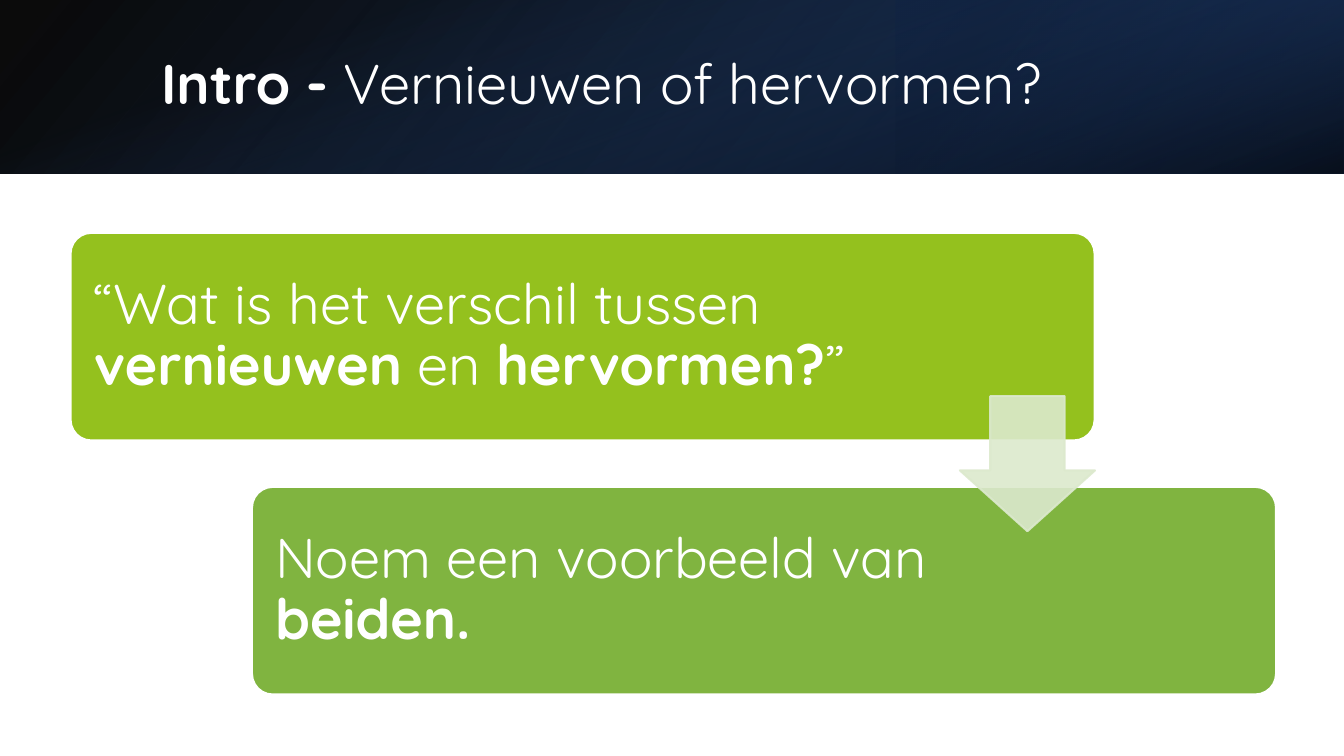
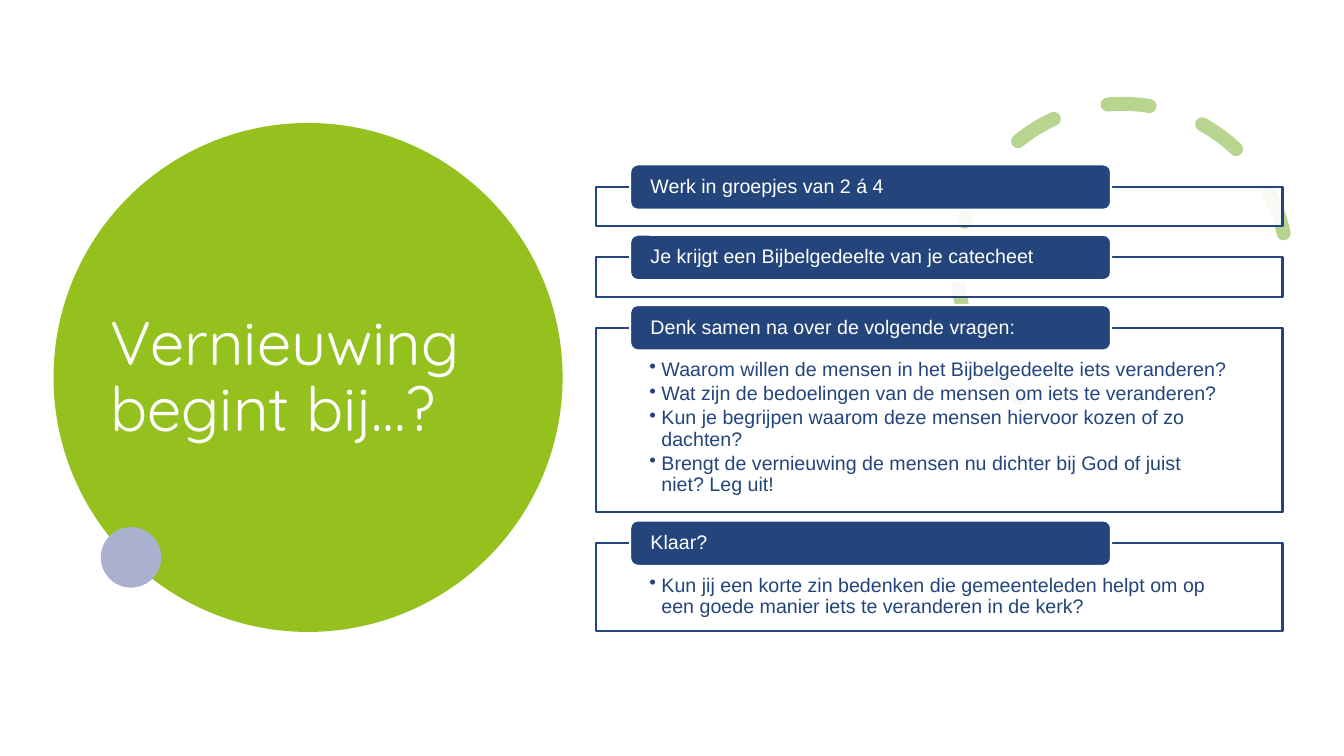
from dataclasses import dataclass

from lxml.etree import SubElement
from pptx import Presentation
from pptx.dml.color import RGBColor
from pptx.enum.dml import MSO_LINE
from pptx.enum.shapes import MSO_SHAPE as SHAPE
from pptx.enum.text import MSO_ANCHOR as ANCHOR, PP_ALIGN as ALIGN
from pptx.oxml.ns import qn
from pptx.util import Inches, Pt


@dataclass(frozen=True)
class Theme:
    white: str = "FFFFFF"
    black: str = "000000"
    navy: str = "23457C"
    deep_navy: str = "1A345D"
    night: str = "11223E"
    lime: str = "94C11E"
    green: str = "80B440"
    pale_green: str = "DCE9CD"
    dash_green: str = "B7D58F"
    lavender: str = "A9B1CF"
    display: str = "Quicksand"
    body: str = "Arial"
    statement_size: int = 40
    title_size: int = 44
    body_size: int = 14
    outline: float = 1.5


T = Theme()
WIDTH, HEIGHT = Inches(13.33), Inches(7.5)
BAND_HEIGHT = 22.93


# Grid: 100 columns by 100 rows over the slide
def cells(x, y, w, h):
    return (int(WIDTH * x / 100), int(HEIGHT * y / 100),
            int(WIDTH * w / 100), int(HEIGHT * h / 100))


def rgb(color):
    return RGBColor.from_string(color)


def set_alpha(color_element, percent):
    SubElement(color_element, qn("a:alpha")).set("val", str(percent * 1000))


# Shapes
def add_block(slide, kind, box, fill=None, line=None, width=T.outline):
    block = slide.shapes.add_shape(kind, *cells(*box))
    block.shadow.inherit = False
    if fill:
        block.fill.solid()
        block.fill.fore_color.rgb = rgb(fill)
    else:
        block.fill.background()
    if line:
        block.line.color.rgb = rgb(line)
        block.line.width = Pt(width)
    else:
        block.line.fill.background()
    return block


def add_gradient(slide, box, angle, stops):
    """Stops are (position, colour, opacity); the angle runs clockwise."""
    layer = add_block(slide, SHAPE.RECTANGLE, box)
    layer.fill.gradient()
    layer.fill.gradient_angle = 360 - angle
    for stop, (position, color, _) in zip(layer.fill.gradient_stops, stops):
        stop.position = position
        stop.color.rgb = rgb(color)
    colors = layer.element.spPr.iter(qn("a:srgbClr"))
    for color_element, (_, _, opacity) in zip(colors, stops):
        set_alpha(color_element, opacity)


# Text
def set_frame(holder, anchor, insets=(0.1, 0.05, 0.1, 0.05)):
    frame = holder.text_frame
    frame.word_wrap = True
    frame.vertical_anchor = anchor
    (frame.margin_left, frame.margin_top,
     frame.margin_right, frame.margin_bottom) = map(Inches, insets)
    return frame


def style(paragraph, font, size, color):
    paragraph.alignment = ALIGN.LEFT
    paragraph.line_spacing = 0.9
    paragraph.font.name = font
    paragraph.font.size = Pt(size)
    paragraph.font.color.rgb = rgb(color)


def write_runs(frame, runs, font, size, color=T.white):
    """Write one paragraph from (text, bold) pairs."""
    paragraph = frame.paragraphs[0]
    style(paragraph, font, size, color)
    for text, bold in runs:
        run = paragraph.add_run()
        run.text = text
        run.font.bold = bold


def write_bullets(frame, lines):
    for number, line in enumerate(lines):
        bullet = frame.add_paragraph() if number else frame.paragraphs[0]
        bullet.text = line
        bullet.space_after = Pt(2)
        bullet.line_spacing = 0.9
        properties = bullet._p.get_or_add_pPr()
        properties.set("marL", str(Inches(0.12)))
        properties.set("indent", str(-Inches(0.12)))
        SubElement(properties, qn("a:buChar")).set("char", "•")
        style(bullet, T.body, T.body_size, T.navy)


def add_title(slide, box, runs, size):
    title = slide.shapes.add_textbox(*cells(*box))
    write_runs(set_frame(title, ANCHOR.MIDDLE), runs, T.display, size)


# Parts of the slides
def add_band(slide):
    add_gradient(slide, (0, 0, 100, BAND_HEIGHT), 40,
                 [(0, T.black, 96), (1, T.deep_navy, 100)])
    add_gradient(slide, (66.67, 0, 33.33, BAND_HEIGHT), 40,
                 [(0.19, T.night, 68), (1, T.navy, 79)])
    add_gradient(slide, (0, 0, 100, BAND_HEIGHT), 70,
                 [(0.23, T.navy, 0), (0.99, T.black, 74)])


def add_statement(slide, x, y, fill, right_inset, runs):
    statement = add_block(slide, SHAPE.ROUNDED_RECTANGLE,
                          (x, y, 76.2, 27.47), fill, T.white)
    statement.adjustments[0] = 0.1
    frame = set_frame(statement, ANCHOR.MIDDLE, (0.17, 0.17, right_inset, 0.17))
    write_runs(frame, runs, T.display, T.statement_size)


def add_step(slide, y, height, heading, questions):
    card = add_block(slide, SHAPE.RECTANGLE, (44.34, y, 51.09, height),
                     T.white, T.navy)
    set_alpha(card.element.spPr.find(qn("a:solidFill"))[0], 90)
    if questions:
        frame = set_frame(card, ANCHOR.TOP, (0.53, 0.32, 0.53, 0.11))
        write_bullets(frame, questions)
    label = add_block(slide, SHAPE.ROUNDED_RECTANGLE, (46.89, y - 3, 35.78, 6),
                      T.navy, T.white)
    frame = set_frame(label, ANCHOR.MIDDLE, (0.18, 0, 0.18, 0))
    write_runs(frame, [(heading, None)], T.body, T.body_size)


def add_dashed_arc(slide):
    arc = add_block(slide, SHAPE.ARC, (71.27, 13.73, 24.53, 43.6),
                    line=T.dash_green, width=10)
    for index, degrees in enumerate((158.17, 17.81)):
        arc.adjustments[index] = degrees * 0.6
    arc.rotation = 330.2
    arc.line.dash_style = MSO_LINE.DASH
    arc.element.spPr.find(qn("a:ln")).set("cap", "rnd")


# Slides
def build_intro(slide):
    add_band(slide)
    add_title(slide, (11.25, 5.07, 82.37, 12.8),
              [("Intro - ", True), ("Vernieuwen of hervormen?", False)],
              T.statement_size)
    add_statement(slide, 5.25, 30.8, T.lime, 2.18, [
        ("“Wat is het verschil tussen ", False), ("vernieuwen", True),
        (" en ", False), ("hervormen?", True), ("”", False)])
    add_statement(slide, 18.75, 64.4, T.green, 3.31, [
        ("Noem een voorbeeld van ", False), ("beiden.", True)])
    arrow = add_block(slide, SHAPE.DOWN_ARROW, (71.42, 52.4, 10.05, 17.87),
                      T.pale_green, T.pale_green)
    arrow.adjustments[0], arrow.adjustments[1] = 0.55, 0.45
    for color_element in arrow.element.spPr.iter(qn("a:srgbClr")):
        set_alpha(color_element, 90)


def build_assignment(slide):
    add_block(slide, SHAPE.OVAL, (3.98, 16.27, 37.88, 67.33), T.lime)
    add_title(slide, (7.5, 20.4, 30.3, 59.33),
              [("Vernieuwing begint bij…?", None)], T.title_size)
    add_dashed_arc(slide)
    add_block(slide, SHAPE.OVAL, (7.5, 69.73, 4.5, 8), T.lavender)

    steps = [
        (5.2, "Werk in groepjes van 2 á 4", []),
        (5.2, "Je krijgt een Bijbelgedeelte van je catecheet", []),
        (24.4, "Denk samen na over de volgende vragen:", [
            "Waarom willen de mensen in het Bijbelgedeelte iets veranderen?",
            "Wat zijn de bedoelingen van de mensen om iets te veranderen?",
            "Kun je begrijpen waarom deze mensen hiervoor kozen of zo dachten?",
            "Brengt de vernieuwing de mensen nu dichter bij God of juist niet? "
            "Leg uit!"]),
        (11.6, "Klaar?", [
            "Kun jij een korte zin bedenken die gemeenteleden helpt om op "
            "een goede manier iets te veranderen in de kerk?"]),
    ]
    y, gap = 24.75, 4.1
    for height, heading, questions in steps:
        add_step(slide, y, height, heading, questions)
        y += height + gap


def main():
    deck = Presentation()
    deck.slide_width, deck.slide_height = WIDTH, HEIGHT
    blank = deck.slide_layouts[6]
    for build in (build_intro, build_assignment):
        build(deck.slides.add_slide(blank))
    deck.save("out.pptx")


if __name__ == "__main__":
    main()
